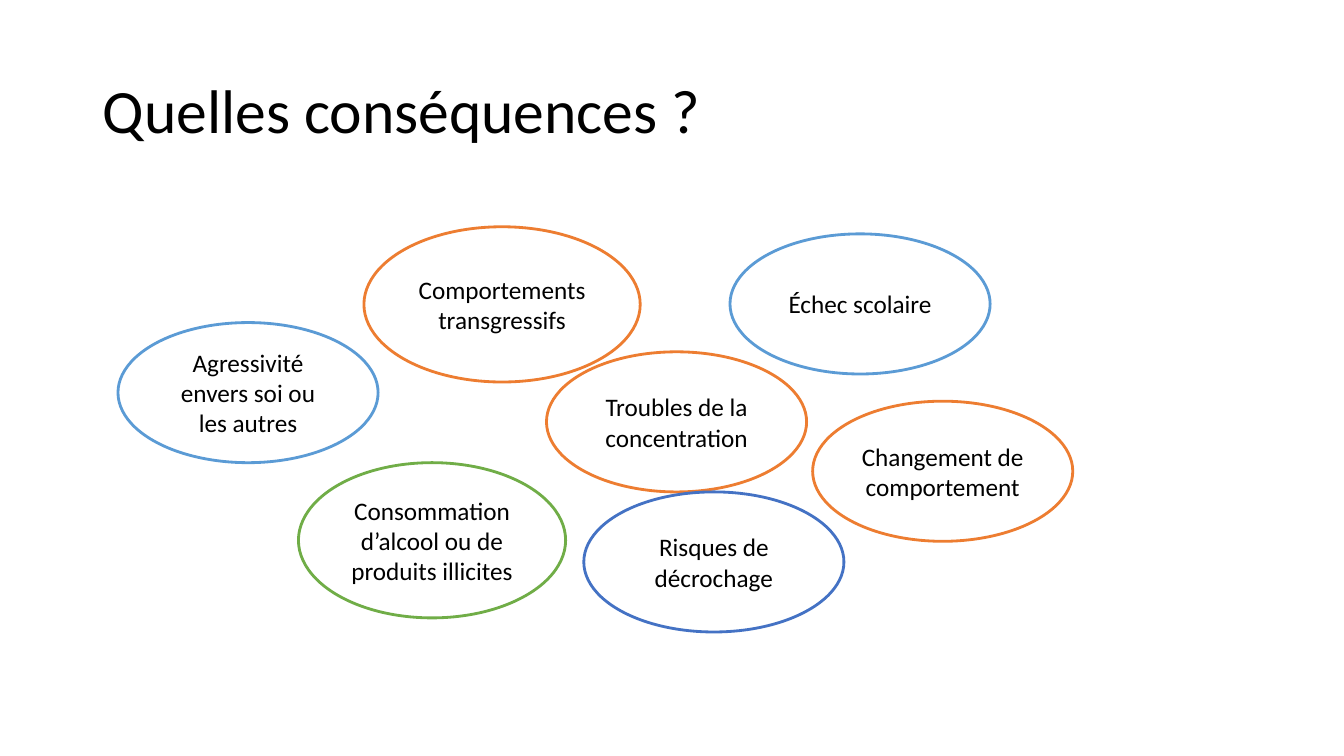
import pptx
import pptx.util
import pptx.dml.color
import pptx.enum.shapes
import pptx.enum.text

Inches = pptx.util.Inches
ORANGE, SKY, BLUE, GREEN = "ED7D31", "5B9BD5", "4472C4", "70AD47"
BLACK, WHITE = "000000", "FFFFFF"
STANDARD, TALL, TALL_WIDE = (2.58, 1.39), (2.65, 1.54), (2.74, 1.54)


def color(hex_code):
    return pptx.dml.color.RGBColor.from_string(hex_code)


def write(frame, text, size, alignment):
    """Put one run of black Calibri, vertically centred, in the frame."""
    frame.word_wrap = True
    frame.auto_size = pptx.enum.text.MSO_AUTO_SIZE.NONE
    frame.vertical_anchor = pptx.enum.text.MSO_ANCHOR.MIDDLE
    paragraph = frame.paragraphs[0]
    paragraph.alignment = alignment
    run = paragraph.add_run()
    run.text = text
    run.font.name = "Calibri"
    run.font.size = pptx.util.Pt(size)
    run.font.color.rgb = color(BLACK)


deck = pptx.Presentation()
deck.slide_width = Inches(13.33)
deck.slide_height = Inches(7.5)
slide = deck.slides.add_slide(deck.slide_layouts[5])

heading = slide.shapes.title
heading.left, heading.top = Inches(0.92), Inches(0.4)
heading.width, heading.height = Inches(11.5), Inches(1.45)
write(heading.text_frame, "Quelles conséquences ?", 44, pptx.enum.text.PP_ALIGN.LEFT)
heading.text_frame.paragraphs[0].line_spacing = 0.9

# Back to front: text, left, top, size, outline
consequences = [
    ("Changement de comportement", 8.06, 3.98, STANDARD, ORANGE),
    ("Troubles de la concentration", 5.42, 3.49, STANDARD, ORANGE),
    ("Échec scolaire", 7.24, 2.32, STANDARD, SKY),
    ("Risques de décrochage", 5.79, 4.88, STANDARD, BLUE),
    ("Comportements transgressifs", 3.61, 2.25, TALL_WIDE, ORANGE),
    ("Agressivité envers soi ou les autres", 1.17, 3.2, STANDARD, SKY),
    ("Consommation d’alcool ou de produits illicites", 2.96, 4.59, TALL, GREEN),
]
for text, left, top, (width, height), outline in consequences:
    bubble = slide.shapes.add_shape(
        pptx.enum.shapes.MSO_SHAPE.OVAL,
        Inches(left), Inches(top), Inches(width), Inches(height),
    )
    bubble.shadow.inherit = False
    bubble.fill.solid()
    bubble.fill.fore_color.rgb = color(WHITE)
    bubble.line.color.rgb = color(outline)
    bubble.line.width = pptx.util.Pt(2)
    write(bubble.text_frame, text, 18, pptx.enum.text.PP_ALIGN.CENTER)

deck.save("out.pptx")
